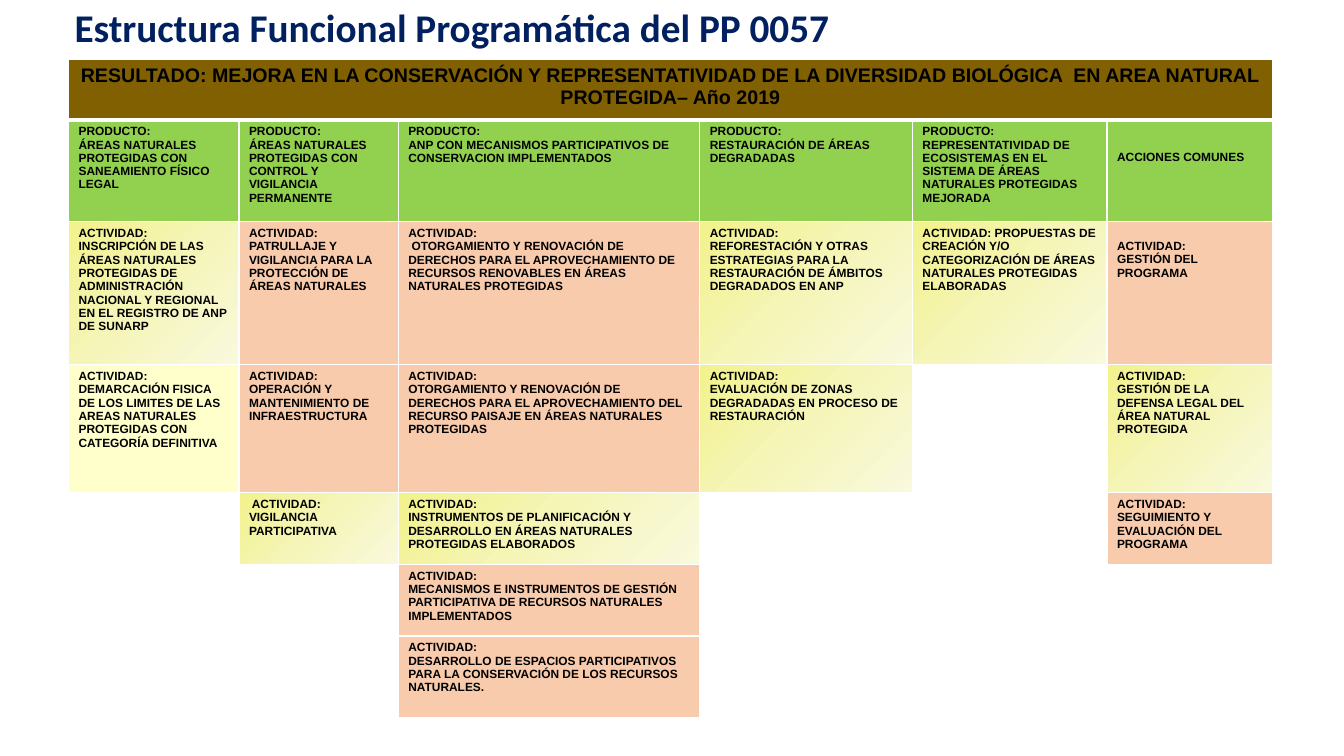
from pptx import Presentation
from pptx.dml.color import RGBColor as Color
from pptx.enum.text import MSO_ANCHOR as Anchor, PP_ALIGN as Align
from pptx.oxml import parse_xml
from pptx.oxml.ns import nsdecls, qn
from pptx.util import Inches, Pt
from lxml import etree

TITLE = "Estructura Funcional Programática del PP 0057"
RESULT = ("RESULTADO: MEJORA EN LA CONSERVACIÓN Y REPRESENTATIVIDAD DE LA "
          "DIVERSIDAD BIOLÓGICA  EN AREA NATURAL PROTEGIDA– Año 2019")
PRODUCT, ACTIVITY = "PRODUCTO:\n", "ACTIVIDAD:\n"

COLUMNS = [
    (1.69, PRODUCT + "ÁREAS NATURALES PROTEGIDAS CON SANEAMIENTO FÍSICO LEGAL", [
        ("gradient", ACTIVITY + "INSCRIPCIÓN DE LAS ÁREAS NATURALES PROTEGIDAS DE ADMINISTRACIÓN "
                                "NACIONAL Y REGIONAL EN EL REGISTRO DE ANP DE SUNARP"),
        ("cream", ACTIVITY + "DEMARCACIÓN FISICA DE LOS LIMITES DE LAS AREAS NATURALES "
                             "PROTEGIDAS CON CATEGORÍA DEFINITIVA"),
    ]),
    (1.58, PRODUCT + "ÁREAS NATURALES PROTEGIDAS CON CONTROL Y VIGILANCIA PERMANENTE", [
        ("peach", ACTIVITY + "PATRULLAJE Y VIGILANCIA PARA LA PROTECCIÓN DE ÁREAS NATURALES"),
        ("peach", ACTIVITY + "OPERACIÓN Y MANTENIMIENTO DE INFRAESTRUCTURA"),
        ("gradient", " " + ACTIVITY + "VIGILANCIA PARTICIPATIVA"),
    ]),
    (2.99, PRODUCT + "ANP CON MECANISMOS PARTICIPATIVOS DE CONSERVACION IMPLEMENTADOS", [
        ("peach", ACTIVITY + " OTORGAMIENTO Y RENOVACIÓN DE DERECHOS PARA EL APROVECHAMIENTO DE "
                             "RECURSOS RENOVABLES EN ÁREAS NATURALES PROTEGIDAS"),
        ("peach", ACTIVITY + "OTORGAMIENTO Y RENOVACIÓN DE DERECHOS PARA EL APROVECHAMIENTO DEL "
                             "RECURSO PAISAJE EN ÁREAS NATURALES PROTEGIDAS"),
        ("gradient", ACTIVITY + "INSTRUMENTOS DE PLANIFICACIÓN Y DESARROLLO EN ÁREAS NATURALES "
                                "PROTEGIDAS ELABORADOS"),
        ("peach", ACTIVITY + "MECANISMOS E INSTRUMENTOS DE GESTIÓN PARTICIPATIVA DE RECURSOS "
                             "NATURALES IMPLEMENTADOS"),
        ("peach", ACTIVITY + "DESARROLLO DE ESPACIOS PARTICIPATIVOS PARA LA CONSERVACIÓN DE LOS "
                             "RECURSOS NATURALES."),
    ]),
    (2.11, PRODUCT + "RESTAURACIÓN DE ÁREAS DEGRADADAS", [
        ("gradient", ACTIVITY + "REFORESTACIÓN Y OTRAS ESTRATEGIAS PARA LA RESTAURACIÓN DE "
                                "ÁMBITOS DEGRADADOS EN ANP"),
        ("gradient", ACTIVITY + "EVALUACIÓN DE ZONAS DEGRADADAS EN PROCESO DE RESTAURACIÓN"),
    ]),
    (1.93, PRODUCT + "REPRESENTATIVIDAD DE ECOSISTEMAS EN EL SISTEMA DE ÁREAS NATURALES "
                     "PROTEGIDAS MEJORADA", [
        ("gradient", "ACTIVIDAD: PROPUESTAS DE CREACIÓN Y/O CATEGORIZACIÓN DE ÁREAS NATURALES "
                     "PROTEGIDAS ELABORADAS"),
    ]),
    (1.64, "ACCIONES COMUNES", [
        ("peach", ACTIVITY + "GESTIÓN DEL PROGRAMA"),
        ("gradient", ACTIVITY + "GESTIÓN DE LA DEFENSA LEGAL DEL ÁREA NATURAL PROTEGIDA"),
        ("peach", ACTIVITY + "SEGUIMIENTO Y EVALUACIÓN DEL PROGRAMA"),
    ]),
]
ROW_HEIGHTS = [0.6, 1.01, 1.42, 1.27, 0.71, 0.26, 0.45, 0.08, 0.73]
ACTIVITY_ROWS = [2, 3, 4, 5, 7]
LOWERED_CELLS = {(1, 5): 0.31, (2, 5): 0.18}

THEME = {
    "fills": {"result": "806000", "product": "92D050", "peach": "F8CBAD",
              "cream": "FFFFCC", "blank": "FFFFFF"},
    "gradient": [(0, "F2F28C"), (50, "F5F5BA"), (100, "F9F9DE")],
    "border": "FFFFFF",
    "title": {"name": "Calibri", "size": Pt(28), "bold": True, "color": "002060"},
    "result": {"name": "Arial", "size": Pt(14), "bold": True, "color": "000000"},
    "body": {"name": "Arial", "size": Pt(8.5), "bold": True, "color": "000000"},
}


def format_font(font, style):
    for name, value in style.items():
        if name == "color":
            font.color.rgb = Color.from_string(value)
        else:
            setattr(font, name, value)


def fill_cell(cell, tone):
    if tone != "gradient":
        cell.fill.solid()
        cell.fill.fore_color.rgb = Color.from_string(THEME["fills"][tone])
        return
    stops = "".join(f'<a:gs pos="{place * 1000}"><a:srgbClr val="{color}"/></a:gs>'
                    for place, color in THEME["gradient"])
    cell._tc.get_or_add_tcPr().append(parse_xml(
        f'<a:gradFill {nsdecls("a")} rotWithShape="1"><a:gsLst>{stops}</a:gsLst>'
        '<a:lin ang="2700000" scaled="0"/></a:gradFill>'))


def draw_borders(cell, row):
    heavy = {"T": row == 1, "B": row == 0}
    for index, side in enumerate("LRTB"):
        width = Pt(3 if heavy.get(side) else 1)
        cell._tc.get_or_add_tcPr().insert(index, parse_xml(
            f'<a:ln{side} {nsdecls("a")} w="{width}"><a:solidFill>'
            f'<a:srgbClr val="{THEME["border"]}"/></a:solidFill></a:ln{side}>'))


def write_cell(cell, text, style):
    cell.text = text
    for paragraph in cell.text_frame.paragraphs:
        for run in paragraph.runs:
            format_font(run.font, style)
        if not paragraph.runs:
            ending = etree.SubElement(paragraph._p, qn("a:endParaRPr"))
            ending.set("sz", str(int(style["size"].pt * 100)))


def add_title(slide):
    title = slide.shapes.title
    place = {"left": -0.51, "top": 0.13, "width": 9.98, "height": 0.43}
    for name, value in place.items():
        setattr(title, name, Inches(value))
    title.text_frame.text = TITLE
    title.text_frame.vertical_anchor = Anchor.BOTTOM
    paragraph = title.text_frame.paragraphs[0]
    paragraph.alignment = Align.CENTER
    paragraph.line_spacing = 0.9
    format_font(paragraph.runs[0].font, THEME["title"])


def add_structure(slide):
    contents = {(0, 0): ("result", RESULT)}
    for column, (width, product, activities) in enumerate(COLUMNS):
        contents[1, column] = ("product", product)
        for row, activity in zip(ACTIVITY_ROWS, activities):
            contents[row, column] = activity

    widths = [column[0] for column in COLUMNS]
    table = slide.shapes.add_table(
        len(ROW_HEIGHTS), len(widths), Inches(0.68), Inches(0.59),
        Inches(sum(widths)), Inches(sum(ROW_HEIGHTS))).table
    table.first_row = table.horz_banding = False
    for column, width in zip(table.columns, widths):
        column.width = Inches(width)
    for row, height in zip(table.rows, ROW_HEIGHTS):
        row.height = Inches(height)

    for row in range(len(ROW_HEIGHTS)):
        for column in range(len(widths)):
            cell = table.cell(row, column)
            tone, text = contents.get((row, column), ("blank", ""))
            write_cell(cell, text, THEME["result" if tone == "result" else "body"])
            fill_cell(cell, tone)
            draw_borders(cell, row)
            if (row, column) in LOWERED_CELLS:
                cell.margin_top = Inches(LOWERED_CELLS[row, column])

    table.cell(0, 0).text_frame.paragraphs[0].alignment = Align.CENTER
    table.cell(0, 0).merge(table.cell(0, len(widths) - 1))
    for column, (width, product, activities) in enumerate(COLUMNS):
        full = len(activities) == len(ACTIVITY_ROWS)
        for row in (5, 7) if full else (6,):
            table.cell(row, column).merge(table.cell(row + 1, column))


def main():
    presentation = Presentation()
    presentation.slide_width = Inches(13.33)
    presentation.slide_height = Inches(7.5)
    slide = presentation.slides.add_slide(presentation.slide_layouts[5])
    add_title(slide)
    add_structure(slide)
    presentation.save("out.pptx")


if __name__ == "__main__":
    main()
